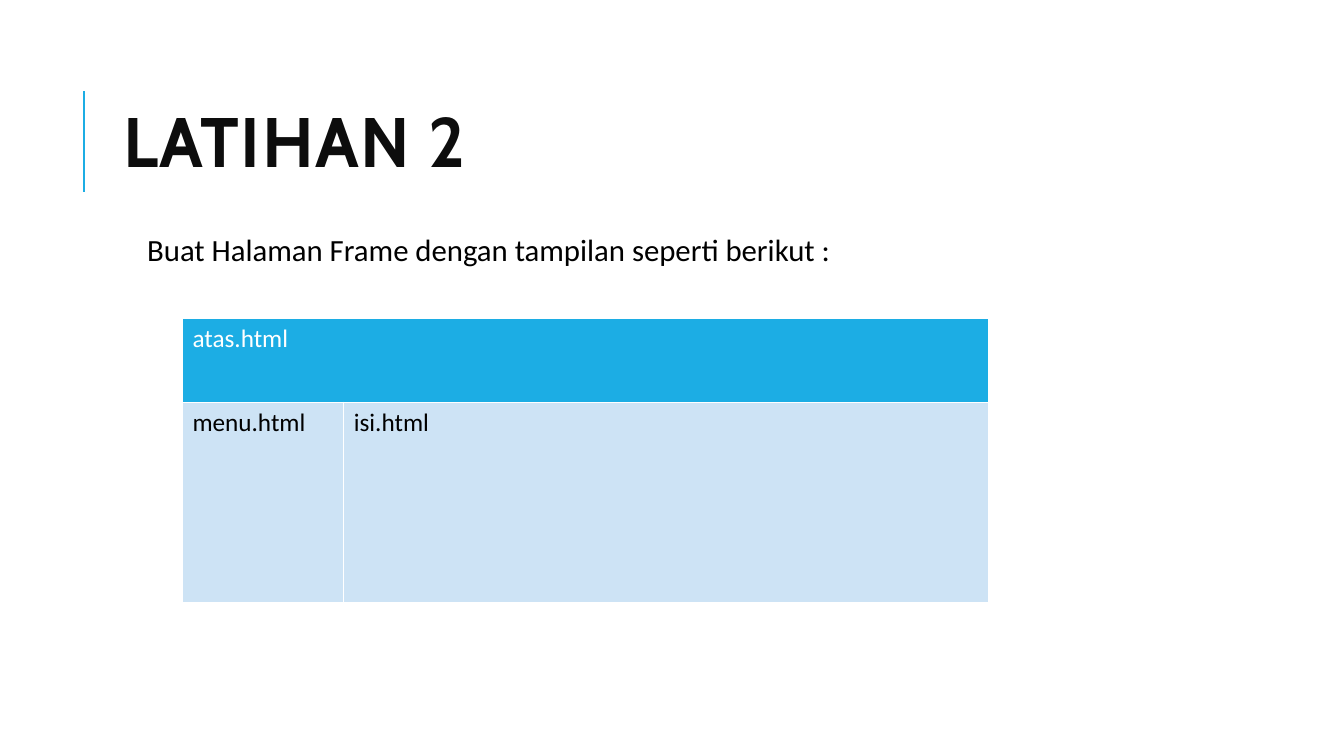
import dataclasses

import lxml.etree
import pptx
import pptx.dml.color
import pptx.enum.shapes
import pptx.enum.text
import pptx.oxml.ns
import pptx.util

Inches = pptx.util.Inches


@dataclasses.dataclass(frozen=True)
class Theme:
    """Hold the colours, fonts and type sizes."""
    accent: str = "1CADE4"
    pale: str = "CDE3F5"
    white: str = "FFFFFF"
    black: str = "000000"
    ink: str = "0D0D0D"
    head: str = "Cabin"
    text: str = "Calibri"
    big: int = 50
    mid: int = 22
    small: int = 18


THEME = Theme()


def color(code):
    """Turn a hex code into a colour."""
    return pptx.dml.color.RGBColor.from_string(code)


def place(shape, left, top, width, height):
    """Move and size a shape, in inches."""
    shape.left, shape.top = Inches(left), Inches(top)
    shape.width, shape.height = Inches(width), Inches(height)


def style(para, name, size, code, bold=False):
    """Format the runs of a paragraph."""
    for run in para.runs:
        font = run.font
        font.name, font.size, font.bold = name, pptx.util.Pt(size), bold
        font.color.rgb = color(code)


def add_rule(slide, x, top, bottom):
    """Draw the upright line beside the title."""
    kind = pptx.enum.shapes.MSO_CONNECTOR.STRAIGHT
    rule = slide.shapes.add_connector(
        kind, Inches(x), Inches(bottom), Inches(x), Inches(top))
    rule.line.color.rgb = color(THEME.accent)
    rule.line.width = pptx.util.Pt(1.5)
    lxml.etree.SubElement(
        rule._element.spPr, pptx.oxml.ns.qn("a:effectLst"))


def fill_title(shape, text):
    """Set the slide title."""
    place(shape, 1.12, 0.64, 10.63, 1.64)
    frame = shape.text_frame
    frame.text = text
    frame.vertical_anchor = pptx.enum.text.MSO_ANCHOR.MIDDLE
    para = frame.paragraphs[0]
    para.alignment = pptx.enum.text.PP_ALIGN.LEFT
    para.line_spacing = 0.8
    style(para, THEME.head, THEME.big, THEME.ink, True)
    for run in para.runs:
        run.font._element.set("spc", "100")


def fill_body(shape, text):
    """Set the task text without a bullet."""
    place(shape, 1.31, 2.28, 9, 4.95)
    frame = shape.text_frame
    frame.text = text
    frame.margin_left = frame.margin_right = Inches(0.05)
    frame.margin_top = frame.margin_bottom = Inches(0.05)
    para = frame.paragraphs[0]
    props = para._p.get_or_add_pPr()
    props.set("marL", str(Inches(0.1)))
    props.set("indent", "0")
    lxml.etree.SubElement(props, pptx.oxml.ns.qn("a:buNone"))
    para.line_spacing = 0.9
    para.space_before = pptx.util.Pt(0)
    para.space_after = pptx.util.Pt(2)
    style(para, THEME.text, THEME.mid, THEME.black)


def fill_cell(cell, text, back, fore):
    """Set the text and colours of a table cell."""
    cell.text = text
    cell.fill.solid()
    cell.fill.fore_color.rgb = color(back)
    style(cell.text_frame.paragraphs[0], THEME.text, THEME.small, fore)


def add_frames(slide):
    """Add the table that shows the frame layout."""
    table = slide.shapes.add_table(
        2, 2, Inches(1.81), Inches(3.16), Inches(8), Inches(2.82)).table
    table.horz_banding = False
    for col, width in zip(table.columns, (1.6, 6.4)):
        col.width = Inches(width)
    for row, height in zip(table.rows, (0.83, 1.99)):
        row.height = Inches(height)
    top = table.cell(0, 0)
    top.merge(table.cell(0, 1))
    fill_cell(top, "atas.html", THEME.accent, THEME.white)
    for col, name in enumerate(("menu.html", "isi.html")):
        fill_cell(table.cell(1, col), name, THEME.pale, THEME.black)


def main():
    """Build and save the slide."""
    deck = pptx.Presentation()
    deck.slide_width, deck.slide_height = Inches(13.33), Inches(7.5)
    slide = deck.slides.add_slide(deck.slide_layouts[1])
    slide.background.fill.solid()
    slide.background.fill.fore_color.rgb = color(THEME.white)
    add_rule(slide, 0.83, 0.9, 1.9)
    fill_title(slide.shapes.title, "LATIHAN 2")
    fill_body(slide.placeholders[1],
              "Buat Halaman Frame dengan tampilan seperti berikut :")
    add_frames(slide)
    deck.save("out.pptx")


if __name__ == "__main__":
    main()
